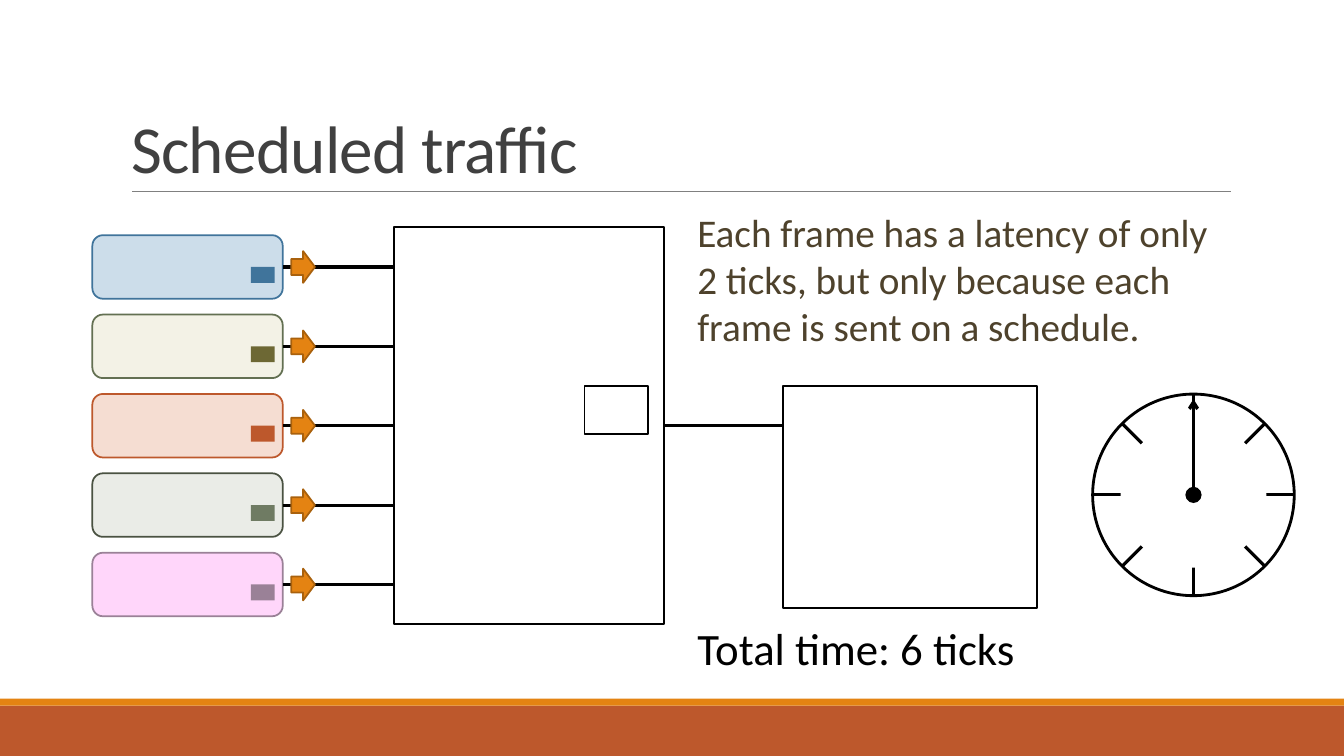
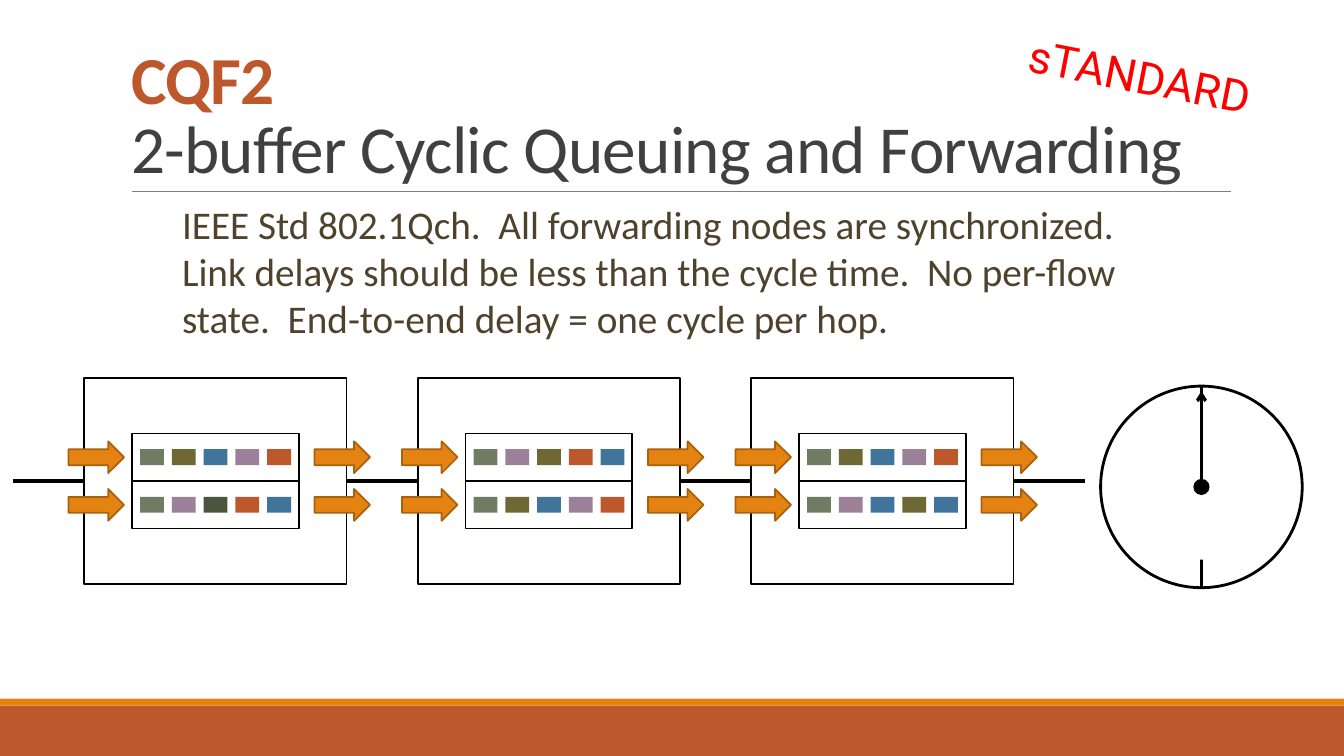
import math

from lxml import etree
from pptx import Presentation
from pptx.dml.color import RGBColor
from pptx.enum import shapes, text
from pptx.oxml.ns import qn
from pptx.util import Pt

C = {
    "black": "000000", "white": "FFFFFF", "red": "FF0000", "rule": "808080",
    "title": "404040", "body": "4E422C", "orange": "E48312", "orange_edge": "A9610D",
    "blue": "40749B", "olive": "6D6834", "rust": "BD582C", "sage": "6F7B63",
    "mauve": "9A8197", "dark": "4A543E", "pale_blue": "CCDDEA", "pale_olive": "F3F2E6",
    "pale_rust": "F5DDD2", "pale_sage": "EAECE7", "pale_mauve": "FFD6FA",
    "olive_edge": "637052", "sage_edge": "4A5242",
}
M = shapes.MSO_SHAPE
FONT = "Calibri"
PACKET_W, PACKET_H, ARROW_H = 17, 11.4, 22.7
RADIUS = 72

SCHEDULED = {
    "title": [("Scheduled traffic", "title", False)],
    "claim": "Each frame has a latency of only 2 ticks, but only because each frame is sent on a schedule.",
    "total": "Total time: 6 ticks",
    "senders": [
        ("pale_blue", "blue", "blue"),
        ("pale_olive", "olive_edge", "olive"),
        ("pale_rust", "rust", "rust"),
        ("pale_sage", "sage_edge", "sage"),
        ("pale_mauve", "mauve", "mauve"),
    ],
}
CYCLIC = {
    "title": [("CQF2", "rust", True),
              ("2-buffer Cyclic Queuing and Forwarding", "title", False)],
    "claim": "IEEE Std 802.1Qch.  All forwarding nodes are synchronized.  Link delays should be "
             "less than the cycle time.  No per-flow state.  End-to-end delay = one cycle per hop.",
    "stamp": "sTANDARD",
    "nodes": [
        (("sage", "olive", "blue", "mauve", "rust"), ("sage", "mauve", "dark", "rust", "blue")),
        (("sage", "mauve", "olive", "rust", "blue"), ("sage", "olive", "blue", "mauve", "rust")),
        (("sage", "olive", "blue", "mauve", "rust"), ("sage", "mauve", "blue", "olive", "blue")),
    ],
}


def rgb(name):
    return RGBColor.from_string(C[name])


def add_box(s, kind, x, y, w, h, fill=None, edge=None, width=1.25):
    sp = s.shapes.add_shape(kind, Pt(x), Pt(y), Pt(w), Pt(h))
    sp.shadow.inherit = False
    if fill:
        sp.fill.solid()
        sp.fill.fore_color.rgb = rgb(fill)
    else:
        sp.fill.background()
    if edge:
        sp.line.color.rgb = rgb(edge)
        sp.line.width = Pt(width)
    else:
        sp.line.fill.background()
    return sp


def add_line(s, x1, y1, x2, y2, color="black", width=2.25, arrow=False):
    cx = s.shapes.add_connector(shapes.MSO_CONNECTOR.STRAIGHT, Pt(x1), Pt(y1), Pt(x2), Pt(y2))
    cx.line.color.rgb = rgb(color)
    cx.line.width = Pt(width)
    if arrow:
        etree.SubElement(cx.line._get_or_add_ln(), qn("a:tailEnd"), type="arrow")
    etree.SubElement(cx.element.spPr, qn("a:effectLst"))
    return cx


def add_run(p, words, size, color, font=FONT, bold=False):
    r = p.add_run()
    r.text = words
    r.font.name = font
    r.font.size = Pt(size)
    r.font.bold = bold
    r.font.color.rgb = rgb(color)


def add_text(s, words, x, y, w, h, size=28, color="body", font=FONT):
    sp = s.shapes.add_textbox(Pt(x), Pt(y), Pt(w), Pt(h))
    sp.text_frame.word_wrap = True
    add_run(sp.text_frame.paragraphs[0], words, size, color, font)
    return sp


def add_arrow(s, x, mid, w):
    add_box(s, M.RIGHT_ARROW, x, mid - ARROW_H / 2, w, ARROW_H, "orange", "orange_edge")


def add_packet(s, x, y, color):
    add_box(s, M.RECTANGLE, x, y, PACKET_W, PACKET_H, color)


def add_disc(s, cx, cy, radius, fill=None, edge=None):
    add_box(s, M.OVAL, cx - radius, cy - radius, 2 * radius, 2 * radius, fill, edge, 2)


def add_clock(s, cx, cy, angles):
    for angle in angles:
        dx = RADIUS * math.cos(math.radians(angle))
        dy = RADIUS * math.sin(math.radians(angle))
        add_line(s, cx + dx, cy + dy, cx - dx, cy - dy)
    add_disc(s, cx, cy, 52, fill="white")
    add_disc(s, cx, cy, RADIUS, edge="black")
    add_disc(s, cx, cy, 5.8, fill="black")
    add_line(s, cx, cy, cx, cy - 68.4, arrow=True)


def set_layout(layout, s):
    frame = [
        add_box(s, M.RECTANGLE, 0, 504, 960, 36, "rust"),
        add_box(s, M.RECTANGLE, 0, 499, 960, 5, "orange"),
        add_line(s, 94.5, 137, 879, 137, "rule", 0.5),
    ]
    for n, part in enumerate(frame):
        part.element.xpath(".//p:cNvPr")[0].set("id", str(50 + n))
        layout.shapes.element.append(part.element)
    title = layout.placeholders[0]
    title.left, title.top, title.width, title.height = Pt(86.4), Pt(22.6), Pt(792), Pt(114.4)


def set_title(s, lines):
    tf = s.shapes.title.text_frame
    tf.auto_size = text.MSO_AUTO_SIZE.NONE
    tf.vertical_anchor = text.MSO_ANCHOR.BOTTOM
    p = tf.paragraphs[0]
    p.alignment = text.PP_ALIGN.LEFT
    p.line_spacing = 0.85
    for n, (words, color, bold) in enumerate(lines):
        if n:
            p.add_line_break()
        add_run(p, words, 48, color, bold=bold)
    for props in s.shapes.title.element.iter(qn("a:rPr")):
        props.set("spc", "-50")


def build_scheduled(s, data):
    set_title(s, data["title"])
    left, top, w, h, pitch = 66, 168, 136, 45.4, 56.7
    switch_x, switch_w, receiver_x = 281.5, 193, 559.5
    add_box(s, M.RECTANGLE, receiver_x, 275.8, 181.5, 158.5, "white", "black")
    add_box(s, M.RECTANGLE, switch_x, 162, switch_w, 283.5, "white", "black")
    for n, (fill, edge, packet) in enumerate(data["senders"]):
        y = top + n * pitch
        mid = y + h / 2
        add_box(s, M.ROUNDED_RECTANGLE, left, y, w, h, fill, edge)
        add_line(s, left + w, mid, switch_x, mid)
        add_packet(s, left + 113.3, mid, packet)
        add_arrow(s, left + 142, mid, 17)
    add_line(s, switch_x + switch_w, 304, receiver_x, 304)
    add_box(s, M.RECTANGLE, 417.6, 275.8, 45.4, 34, edge="black")
    add_text(s, data["claim"], 491, 145.4, 380, 124.6)
    add_text(s, data["total"], 491, 440, 408, 46, 32, "black")
    add_clock(s, 852.5, 353.5, (0, 45, 90, 135))


def build_cyclic(s, data):
    set_title(s, data["title"])
    add_text(s, data["claim"], 123, 139.7, 726, 124.6)
    left, pitch, w, h, mid = 60.3, 238.2, 187.2, 147.4, 343.6
    buffer_w, buffer_h = 119, 34
    for n, buffers in enumerate(data["nodes"]):
        x = left + n * pitch
        buffer_x = x + (w - buffer_w) / 2
        add_box(s, M.RECTANGLE, x, mid - h / 2, w, h, edge="black")
        for row, packets in enumerate(buffers):
            y = mid + (row - 1) * buffer_h
            center = y + buffer_h / 2
            add_box(s, M.RECTANGLE, buffer_x, y, buffer_w, buffer_h, edge="black")
            for arrow_x in (x - 11.4, x + 164.3):
                add_arrow(s, arrow_x, center, 39.7)
            for k, color in enumerate(packets):
                add_packet(s, buffer_x + 5.7 + k * 22.7, center - PACKET_H / 2, color)
    for n in range(len(data["nodes"]) + 1):
        end = left + n * pitch
        add_line(s, end - pitch + w, mid, end, mid)
    add_clock(s, 858.2, 347.8, (90,))
    stamp = add_text(s, data["stamp"], 726.8, 31.4, 180, 46, 32, "red", "Roboto")
    stamp.rotation = 11


def main():
    prs = Presentation()
    prs.slide_width, prs.slide_height = Pt(960), Pt(540)
    layout = prs.slide_layouts[5]
    pages = [(build_scheduled, SCHEDULED), (build_cyclic, CYCLIC)]
    for n, (build, data) in enumerate(pages):
        s = prs.slides.add_slide(layout)
        if n == 0:
            set_layout(layout, s)
        build(s, data)
    prs.save("out.pptx")


if __name__ == "__main__":
    main()
